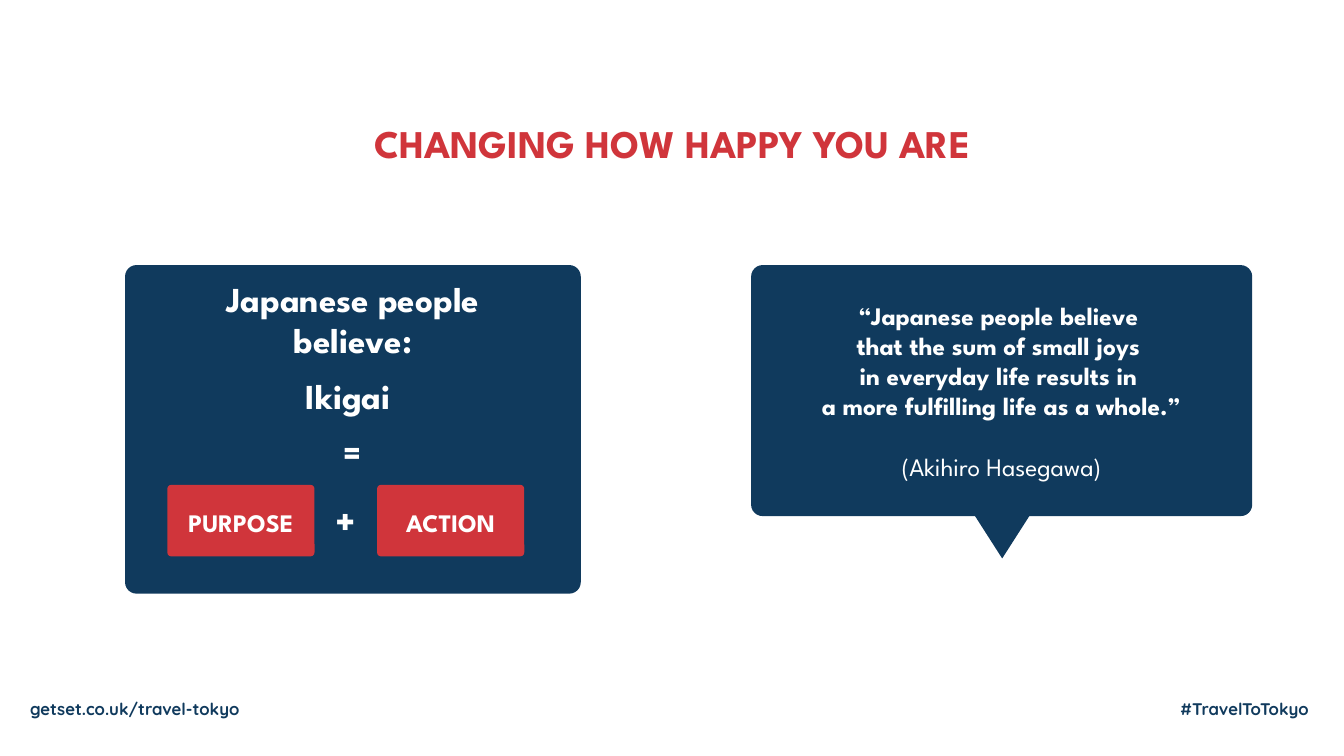
from pptx import Presentation, util as u
from pptx.dml.color import RGBColor
from pptx.enum import shapes, text

NAVY = RGBColor(0x10, 0x3A, 0x5D)
RED = RGBColor(0xD0, 0x35, 0x3B)
WHITE = RGBColor(0xFF, 0xFF, 0xFF)
PX = 9144


class SlideBuilder:
    """Draw styled panels and text on one slide, measured in px."""

    heading_font = "League Spartan"
    footer_font = "Quicksand"

    def __init__(self, presentation):
        self.slide = presentation.slides.add_slide(presentation.slide_layouts[6])

    def panel(self, kind, box, color, radius=None):
        shape = self.slide.shapes.add_shape(kind, *(n * PX for n in box))
        shape.shadow.inherit = False
        shape.fill.solid()
        shape.fill.fore_color.rgb = color
        shape.line.fill.background()
        if radius is not None:
            shape.adjustments[0] = radius
        return shape

    def fill_text(self, shape, paragraphs, size, color=WHITE, font=heading_font,
                  align=text.PP_ALIGN.CENTER, gap=0, anchor=text.MSO_ANCHOR.MIDDLE):
        frame = shape.text_frame
        frame.word_wrap = True
        frame.vertical_anchor = anchor
        for index, words in enumerate(paragraphs):
            paragraph = frame.add_paragraph() if index else frame.paragraphs[0]
            paragraph.text = words
            paragraph.alignment = align
            if index and gap:
                paragraph.space_before = u.Pt(gap)
            for run in paragraph.runs:
                run.font.name = font
                run.font.size = u.Pt(size)
                run.font.bold = True
                run.font.color.rgb = color
        return frame

    def label(self, box, paragraphs, size, **style):
        shape = self.slide.shapes.add_textbox(*(n * PX for n in box))
        return self.fill_text(shape, paragraphs, size, **style)

    def line(self, box, words, size, **style):
        frame = self.label(box, [words], size, anchor=text.MSO_ANCHOR.TOP, **style)
        frame.auto_size = text.MSO_AUTO_SIZE.SHAPE_TO_FIT_TEXT

    def footer(self, box, words):
        self.line(box, words, 12, color=NAVY, font=self.footer_font,
                  align=text.PP_ALIGN.LEFT)


def main():
    presentation = Presentation()
    presentation.slide_width = 1333 * PX
    presentation.slide_height = 750 * PX
    builder = SlideBuilder(presentation)
    rounded = shapes.MSO_SHAPE.ROUNDED_RECTANGLE

    builder.footer((20, 688, 356, 30), "getset.co.uk/travel-tokyo")
    builder.footer((1161, 688, 202, 30), "#TravelToTokyo")
    builder.line((149, 113, 1035, 57), "CHANGING HOW HAPPY YOU ARE", 28, color=RED)

    builder.panel(rounded, (124, 263, 452, 326), NAVY, 0.035)
    builder.label((155, 273, 390, 198),
                  ["Japanese people believe:", "Ikigai ", "="], 25, gap=10)
    for left, word in ((166, "PURPOSE"), (374, "ACTION")):
        builder.panel(rounded, (left, 481, 146, 71), RED, 0.055)
        builder.line((left, 498, 146, 40), word, 18)
    builder.line((301, 487, 85, 57), "+", 28)

    quote = builder.panel(rounded, (745, 263, 497, 249), NAVY, 0.046)
    frame = builder.fill_text(quote, [
        "“Japanese people believe \vthat the sum of small joys ",
        "in everyday life results in \va more fulfilling life as a whole.”",
        "(Akihiro Hasegawa)"], 18)
    author = frame.paragraphs[-1]
    author.space_before = u.Pt(21.6)
    author.runs[0].font.bold = False
    pointer = builder.panel(shapes.MSO_SHAPE.ISOSCELES_TRIANGLE,
                            (962, 504, 64, 50), NAVY)
    pointer.rotation = 180

    presentation.save("out.pptx")


if __name__ == "__main__":
    main()
